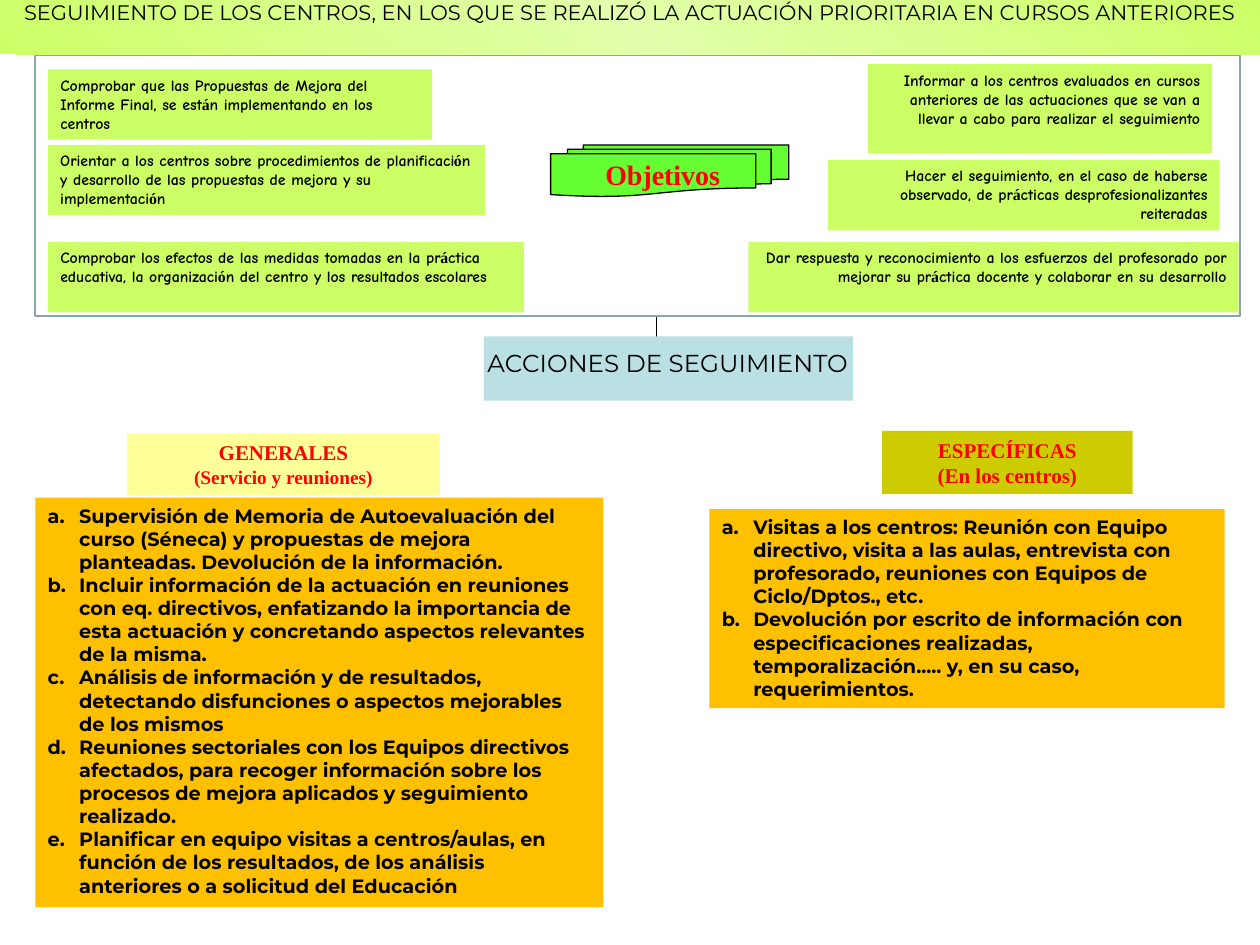
from copy import deepcopy
from itertools import groupby

from pptx import Presentation
from pptx.dml.color import RGBColor
from pptx.enum.shapes import MSO_CONNECTOR, MSO_SHAPE
from pptx.enum.text import MSO_ANCHOR, MSO_AUTO_SIZE, PP_ALIGN
from pptx.oxml.ns import qn
from pptx.util import Inches, Pt

LEFT, CENTER, RIGHT = PP_ALIGN.LEFT, PP_ALIGN.CENTER, PP_ALIGN.RIGHT
TOP, MIDDLE = MSO_ANCHOR.TOP, MSO_ANCHOR.MIDDLE
RECTANGLE, DOCUMENTS = MSO_SHAPE.RECTANGLE, MSO_SHAPE.FLOWCHART_MULTIDOCUMENT
STRAIGHT = MSO_CONNECTOR.STRAIGHT
SANS, SERIF, COMIC = "Montserrat", "Times New Roman", "Comic Neue"
COLORS = {
    "lime": "CCFF66", "pale lime": "E3FFAB", "green": "66FF33", "frame": "8AA6A8",
    "blue": "BBE0E3", "yellow": "FFFF99", "olive": "CCCC00", "amber": "FFC000",
    "red": "FF0000", "black": "000000",
}

TITLE = ("SEGUIMIENTO DE LOS CENTROS, EN LOS QUE SE REALIZÓ LA ACTUACIÓN "
         "PRIORITARIA EN CURSOS ANTERIORES")
ACTIONS_HEADING = "ACCIONES DE SEGUIMIENTO"
GOALS_HEADING = "Objetivos"

# Text, top, width, height, anchor
LEFT_GOALS = [
    ("Comprobar que las Propuestas de Mejora del Informe Final, se están "
     "implementando en los centros", 0.55, 3.05, 0.56, MIDDLE),
    ("Orientar a los centros sobre procedimientos de planificación y desarrollo "
     "de las propuestas de mejora y su implementación", 1.15, 3.47, 0.56, TOP),
    ("Comprobar los efectos de las medidas tomadas en la práctica educativa, la "
     "organización del centro y los resultados escolares", 1.92, 3.78, 0.56, TOP),
]
# Text, right edge, top, width, height
RIGHT_GOALS = [
    ("Informar a los centros evaluados en cursos anteriores de las actuaciones que "
     "se van a llevar a cabo para realizar el seguimiento", 9.62, 0.51, 2.73, 0.71),
    ("Hacer el seguimiento, en el caso de haberse observado, de prácticas "
     "desprofesionalizantes reiteradas", 9.68, 1.27, 3.11, 0.56),
    ("Dar respuesta y reconocimiento a los esfuerzos del profesorado por mejorar su "
     "práctica docente y colaborar en su desarrollo", 9.83, 1.92, 3.89, 0.56),
]
ACTIONS = [
    {
        "heading": [("GENERALES", 12), ("(Servicio y reuniones)", 11)],
        "heading_at": (1.01, 3.44, 2.48, 0.49), "heading_fill": "yellow",
        "list_at": (0.28, 3.95, 4.51, 3.25),
        "items": [
            "Supervisión de Memoria de Autoevaluación del curso (Séneca) y propuestas "
            "de mejora planteadas. Devolución de la información.",
            "Incluir información de la actuación en reuniones con eq. directivos, "
            "enfatizando la importancia de esta actuación y concretando aspectos "
            "relevantes de la misma.",
            "Análisis de información y de resultados, detectando disfunciones o "
            "aspectos mejorables de los mismos",
            "Reuniones sectoriales con los Equipos directivos afectados, para recoger "
            "información sobre los procesos de mejora aplicados y seguimiento realizado.",
            "Planificar en equipo visitas a centros/aulas, en función de los "
            "resultados, de los análisis anteriores o a solicitud del Educación",
        ],
    },
    {
        "heading": [("ESPECÍFICAS", 12), ("(En los centros)", 12)],
        "heading_at": (7, 3.42, 1.99, 0.5), "heading_fill": "olive",
        "list_at": (5.63, 4.04, 4.09, 1.58),
        "items": [
            "Visitas a los centros: Reunión con Equipo directivo, visita a las aulas, "
            "entrevista con profesorado, reuniones con Equipos de Ciclo/Dptos., etc.",
            "Devolución por escrito de información con especificaciones realizadas, "
            "temporalización..... y, en su caso, requerimientos.",
        ],
    },
]


def color(name):
    return RGBColor.from_string(COLORS[name])


def add_box(slide, at, fill=None, line=None, weight=1, kind=RECTANGLE):
    box = slide.shapes.add_shape(kind, *map(Inches, at))
    box.shadow.inherit = False
    if fill:
        box.fill.solid()
        box.fill.fore_color.rgb = color(fill)
    else:
        box.fill.background()
    if line:
        box.line.color.rgb = color(line)
        box.line.width = Pt(weight)
    else:
        box.line.fill.background()
    return box


def add_text(box, lines, font=SANS, accent_font=None, ink="black", bold=False,
             align=LEFT, anchor=TOP, spacing=None, lettered=False):
    """Write (text, size) lines; accent_font sets the letters á and ó apart."""
    frame = box.text_frame
    frame.word_wrap = True
    frame.auto_size = MSO_AUTO_SIZE.NONE
    frame.vertical_anchor = anchor
    for index, (text, size) in enumerate(lines):
        para = frame.paragraphs[0] if index == 0 else frame.add_paragraph()
        para.alignment = align
        if spacing:
            para.line_spacing = spacing
        if lettered:
            properties = para._p.get_or_add_pPr()
            properties.set("marL", str(Inches(0.25)))
            properties.set("indent", str(-Inches(0.25)))
            number = properties.makeelement(qn("a:buAutoNum"), {"type": "alphaLcPeriod"})
            properties.append(number)
        for accented, letters in groupby(text, lambda c: bool(accent_font) and c in "áó"):
            span = para.add_run()
            span.text = "".join(letters)
            span.font.name = accent_font if accented else font
            span.font.size = Pt(size)
            span.font.bold = bold
            span.font.color.rgb = color(ink)


def add_title(slide):
    title = slide.shapes.title
    title.left, title.top, title.width, title.height = map(Inches, (-0.04, -0.03, 10.08, 0.46))
    title.fill.gradient()
    title.fill.gradient_angle = 45
    stops = title._element.spPr.find(".//" + qn("a:gsLst"))
    stops.insert(1, deepcopy(stops[0]))
    for stop, position, name in zip(title.fill.gradient_stops, (0, 0.5, 1),
                                    ("lime", "pale lime", "lime")):
        stop.position = position
        stop.color.rgb = color(name)
    add_text(title, [(TITLE, 12)], align=CENTER, spacing=0.9)


def add_goals(slide):
    add_box(slide, (0.28, 0.44, 9.56, 2.07), line="frame")
    add_box(slide, (4.37, 1.15, 1.89, 0.41), "green", "black", 0.75, DOCUMENTS)
    label = slide.shapes.add_textbox(*map(Inches, (4.16, 1.3, 2.2, 0.28)))
    add_text(label, [(GOALS_HEADING, 16)], font=SERIF, ink="red", bold=True,
             align=CENTER, spacing=Pt(12))
    goals = [(text, (0.38, top, width, height), LEFT, anchor)
             for text, top, width, height, anchor in LEFT_GOALS]
    goals += [(text, (edge - width, top, width, height), RIGHT, TOP)
              for text, edge, top, width, height in RIGHT_GOALS]
    for text, at, align, anchor in goals:
        add_text(add_box(slide, at, "lime"), [(text, 9)], font=COMIC, accent_font=SERIF,
                 bold=True, align=align, anchor=anchor)


def add_actions(slide):
    stem = slide.shapes.add_connector(STRAIGHT, *map(Inches, (5.21, 2.51, 5.21, 2.77)))
    stem.line.color.rgb = color("black")
    stem.line.width = Pt(1)
    properties = stem._element.spPr
    properties.append(properties.makeelement(qn("a:effectLst"), {}))
    add_box(slide, (3.84, 2.67, 2.93, 0.51), "blue")
    label = slide.shapes.add_textbox(*map(Inches, (3.53, 2.71, 3.54, 0.34)))
    add_text(label, [(ACTIONS_HEADING, 14)], align=CENTER)
    for group in ACTIONS:
        add_text(add_box(slide, group["list_at"], "amber"),
                 [(item, 11) for item in group["items"]], bold=True, lettered=True)
        add_text(add_box(slide, group["heading_at"], group["heading_fill"]),
                 group["heading"], font=SERIF, ink="red", bold=True, align=CENTER)


def main():
    deck = Presentation()
    deck.slide_width, deck.slide_height = Inches(10), Inches(7.5)
    slide = deck.slides.add_slide(deck.slide_layouts[5])
    add_title(slide)
    add_actions(slide)
    add_goals(slide)
    deck.save("out.pptx")


if __name__ == "__main__":
    main()
